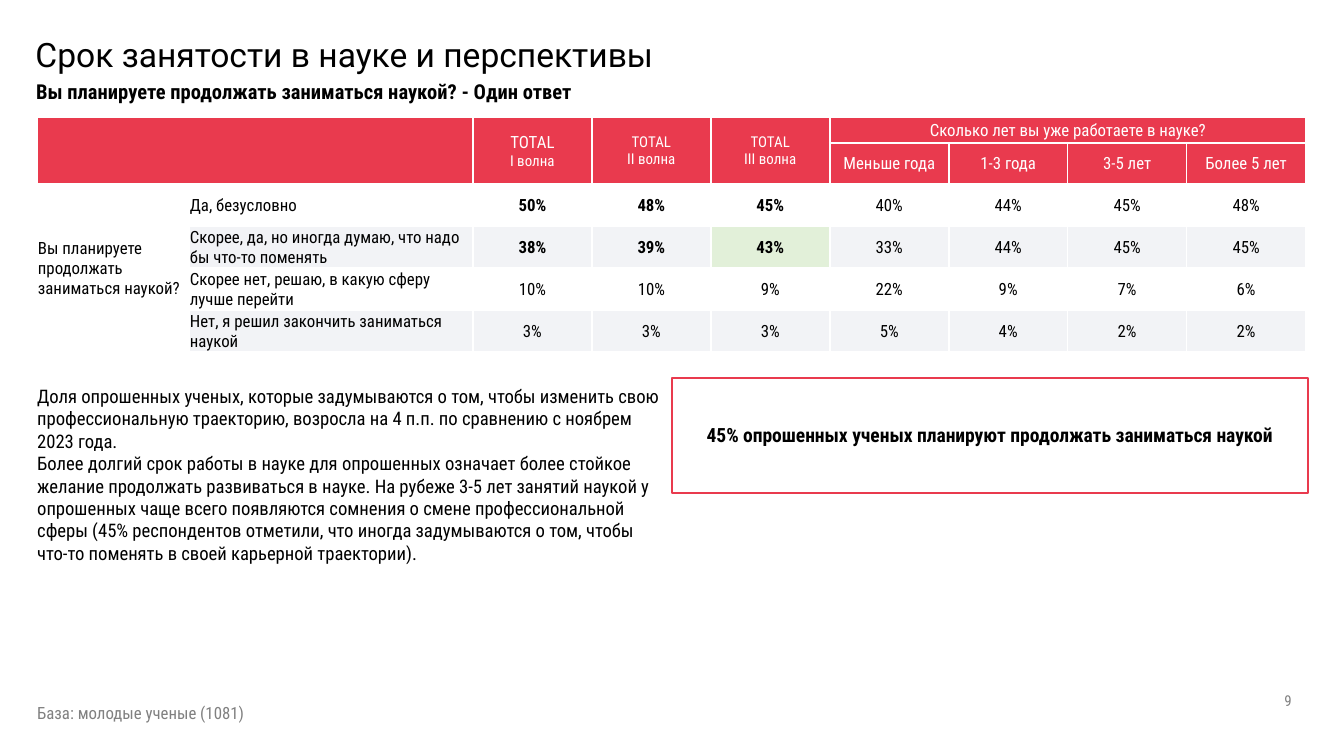
from lxml.etree import SubElement
from pptx import Presentation
from pptx.dml.color import RGBColor
from pptx.enum.shapes import MSO_SHAPE as SHAPE
from pptx.enum.text import MSO_ANCHOR as ANCHOR, MSO_AUTO_SIZE as FIT, PP_ALIGN as ALIGN
from pptx.oxml.ns import qn
from pptx.util import Pt

# Content
TITLE = "Срок занятости в науке и перспективы"
QUESTION = "Вы планируете продолжать заниматься наукой? - Один ответ"
WAVES = [("I волна", "total"), ("II волна", "small"), ("III волна", "small")]
YEARS_HEAD = "Сколько лет вы уже работаете в науке?"
YEARS = ["Меньше года", "1-3 года", "3-5 лет", "Более 5 лет"]
ROW_HEAD = "Вы планируете продолжать заниматься наукой?"
ANSWERS = [
    ("Да, безусловно", [50, 48, 45, 40, 44, 45, 48]),
    ("Скорее, да, но иногда думаю, что надо бы что-то поменять", [38, 39, 43, 33, 44, 45, 45]),
    ("Скорее нет, решаю, в какую сферу лучше перейти", [10, 10, 9, 22, 9, 7, 6]),
    ("Нет, я решил закончить заниматься наукой", [3, 3, 3, 5, 4, 2, 2]),
]
BOLD_ANSWERS = 2
HIGHLIGHT = (3, 4)
COMMENTS = [
    "Доля опрошенных ученых, которые задумываются о том, чтобы изменить свою "
    "профессиональную траекторию, возросла на 4 п.п. по сравнению с ноябрем 2023 года.",
    "Более долгий срок работы в науке для опрошенных означает более стойкое желание "
    "продолжать развиваться в науке. На рубеже 3-5 лет занятий наукой у опрошенных чаще "
    "всего появляются сомнения о смене профессиональной сферы (45% респондентов отметили, "
    "что иногда задумываются о том, чтобы что-то поменять в своей карьерной траектории).",
]
CALLOUT = "45% опрошенных ученых планируют продолжать заниматься наукой"
BASE = "База: молодые ученые (1081)"
PAGE = "9"

THEME = {
    "font": "Roboto Condensed", "title_font": "Roboto",
    "black": "000000", "white": "FFFFFF", "grey": "808080",
    "red": "E93A4E", "band": "F2F3F6", "green": "E2F0D9",
    "title": 18, "question": 11, "callout": 10.5, "body": 10, "total": 9, "cell": 9,
    "small": 8,
}

# Layout in px
PX = 914400 / 134.4
COLS = [152, 284] + [119] * 7
ROWS = [26, 39] + [42] * len(ANSWERS)
CALLOUT_BOX = (672, 378, 636, 115)


def px(*values):
    return [round(v * PX) for v in values]


def color(name):
    return RGBColor.from_string(THEME[name])


def assign(obj, values):
    for name, value in values.items():
        setattr(obj, name, value)


def write(tf, lines, ink="black", bold=False, align=ALIGN.LEFT, font="font"):
    """Fill a text frame with (text, size name) lines."""
    for i, (text, size) in enumerate(lines):
        p = tf.add_paragraph() if i else tf.paragraphs[0]
        p.alignment = align
        r = p.add_run()
        r.text = text
        assign(r.font, {"name": THEME[font], "size": Pt(THEME[size]), "bold": bold})
        r.font.color.rgb = color(ink)


def add_text(slide, box, lines, frame=None, **style):
    tf = slide.shapes.add_textbox(*px(*box)).text_frame
    assign(tf, {"word_wrap": True, **(frame or {})})
    write(tf, lines, **style)
    return tf


def style_cell(cell, fill):
    margin = px(1)[0]
    assign(cell, {"margin_left": margin, "margin_right": margin, "margin_top": margin,
                  "margin_bottom": 0, "vertical_anchor": ANCHOR.MIDDLE})
    tc_pr = cell._tc.get_or_add_tcPr()
    for side in ("a:lnL", "a:lnR", "a:lnT", "a:lnB"):
        ln = SubElement(tc_pr, qn(side), w=str(Pt(1)))
        SubElement(SubElement(ln, qn("a:solidFill")), qn("a:srgbClr"), val=THEME["white"])
    cell.fill.solid()
    cell.fill.fore_color.rgb = color(fill)


def cell_fill(row, col):
    if row < 2:
        return "red"
    if (row, col) == HIGHLIGHT:
        return "green"
    return "band" if row % 2 and col else "white"


def add_answers_table(slide):
    frame = slide.shapes.add_table(len(ROWS), len(COLS), *px(37, 117, sum(COLS), sum(ROWS)))
    table = frame.table
    assign(table, {"first_row": False, "horz_banding": False})
    for col, width in zip(table.columns, px(*COLS)):
        col.width = width
    for row, height in zip(table.rows, px(*ROWS)):
        row.height = height
    for r in range(len(ROWS)):
        for c in range(len(COLS)):
            style_cell(table.cell(r, c), cell_fill(r, c))

    # Merged areas as first and last cell
    spans = [((0, 0), (1, 1)), ((0, 5), (0, 8)), ((2, 0), (5, 0))]
    spans += [((0, c), (1, c)) for c in (2, 3, 4)]
    for first, last in spans:
        table.cell(*first).merge(table.cell(*last))

    def put(row, col, lines, **style):
        write(table.cell(row, col).text_frame, lines, **style)

    # Header rows
    head = {"ink": "white", "align": ALIGN.CENTER}
    for c, (wave, size) in enumerate(WAVES, 2):
        put(0, c, [("TOTAL", size), (wave, "small")], **head)
    put(0, 5, [(YEARS_HEAD, "cell")], **head)
    for c, years in enumerate(YEARS, 5):
        put(1, c, [(years, "cell")], **head)

    # Answer rows
    put(2, 0, [(ROW_HEAD, "cell")])
    for i, (answer, shares) in enumerate(ANSWERS):
        put(i + 2, 1, [(answer, "cell")])
        for j, share in enumerate(shares):
            bold = i < BOLD_ANSWERS and j < len(WAVES)
            put(i + 2, j + 2, [(f"{share}%", "cell")], bold=bold, align=ALIGN.CENTER)


def main():
    prs = Presentation()
    prs.slide_width, prs.slide_height = px(1344, 756)
    slide = prs.slides.add_slide(prs.slide_layouts[5])

    # Title and question
    title = slide.shapes.title
    assign(title, dict(zip(("left", "top", "width", "height"), px(22, 20, 1159, 147))))
    assign(title.text_frame, {"word_wrap": True, "vertical_anchor": ANCHOR.TOP,
                              "margin_top": px(17)[0], "auto_size": FIT.NONE})
    write(title.text_frame, [(TITLE, "title")], font="title_font")
    title.text_frame.paragraphs[0].line_spacing = Pt(20)
    inset = px(13)[0]
    sides = ("left", "right", "top", "bottom")
    tf = add_text(slide, (23, 66, 1107, 94), [(QUESTION, "question")],
                  {f"margin_{side}": inset for side in sides}, bold=True)
    tf.paragraphs[0].line_spacing = 1.02

    # Callout
    sp = slide.shapes.add_shape(SHAPE.RECTANGLE, *px(*CALLOUT_BOX))
    sp.shadow.inherit = False
    sp.fill.background()
    sp.line.color.rgb = color("red")
    sp.line.width = Pt(1)
    grow = {"auto_size": FIT.SHAPE_TO_FIT_TEXT}
    left, top, width, height = CALLOUT_BOX
    add_text(slide, (left, top + (height - 38) // 2, width, 38), [(CALLOUT, "callout")],
             grow, bold=True, align=ALIGN.CENTER)

    # Comments, table, base and page number
    add_text(slide, (24, 378, 648, 195), [(text, "body") for text in COMMENTS], grow)
    add_answers_table(slide)
    add_text(slide, (24, 696, 648, 34), [(BASE, "cell")], grow, ink="grey")
    add_text(slide, (1003, 681, 302, 40), [(PAGE, "small")],
             {"vertical_anchor": ANCHOR.MIDDLE}, ink="grey", align=ALIGN.RIGHT)

    prs.save("out.pptx")


if __name__ == "__main__":
    main()
